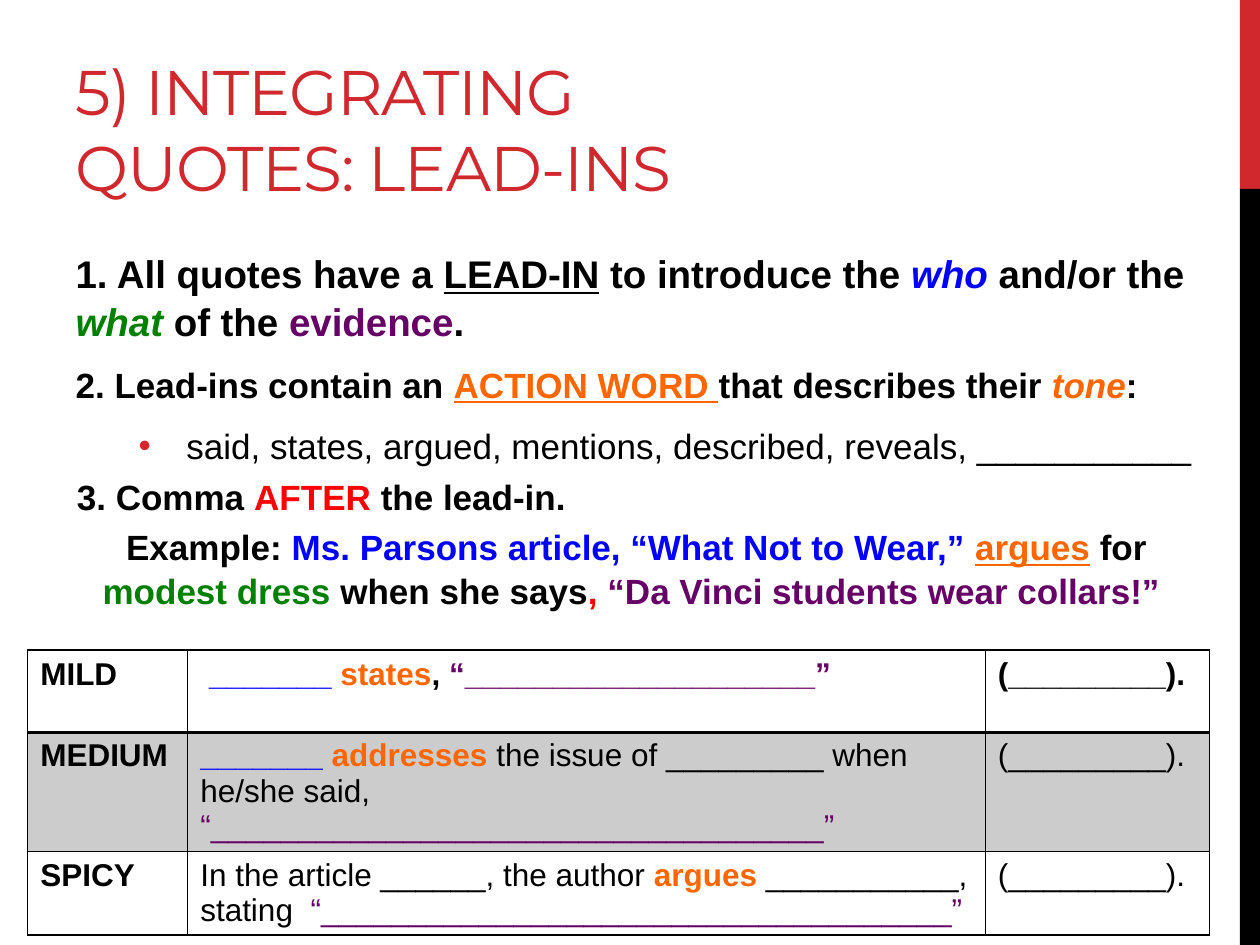
from lxml import etree
from pptx import Presentation
from pptx.dml.color import RGBColor
from pptx.enum.shapes import MSO_SHAPE
from pptx.enum.text import MSO_ANCHOR, MSO_AUTO_SIZE, PP_ALIGN
from pptx.oxml.ns import qn
from pptx.util import Inches, Pt

RECTANGLE = MSO_SHAPE.RECTANGLE
BOTTOM, TOP = MSO_ANCHOR.BOTTOM, MSO_ANCHOR.TOP
LEFT, CENTER = PP_ALIGN.LEFT, PP_ALIGN.CENTER
NO_AUTOFIT = MSO_AUTO_SIZE.NONE

COLORS = {
    "red": "D1282E", "black": "000000", "blue": "0000FF", "green": "008000",
    "purple": "660066", "orange": "FF6600", "bright red": "FF0000",
}


def add_text(para, text, size=20, font="Arial", color="black", bold=False,
             italic=False, underline=False, spacing=None):
    span = para.add_run()
    span.text = text
    style = span.font
    style.size, style.name = Pt(size), font
    style.bold, style.italic, style.underline = bold, italic, underline
    style.color.rgb = RGBColor.from_string(COLORS[color])
    if spacing is not None:
        span._r.get_or_add_rPr().set("spc", str(int(spacing * 100)))


def add_color(parent, color):
    return etree.SubElement(parent, qn("a:srgbClr"), val=COLORS[color])


class SlideBuilder:
    def __init__(self, deck):
        self.page = deck.slides.add_slide(deck.slide_layouts[1])

    def bar(self, left, top, width, height, color):
        box = self.page.shapes.add_shape(
            RECTANGLE, *map(Inches, (left, top, width, height)))
        box.shadow.inherit = False
        box.fill.solid()
        box.fill.fore_color.rgb = RGBColor.from_string(COLORS[color])
        box.line.fill.background()

    def placeholder(self, index, left, top, width, height, anchor):
        box = self.page.placeholders[index]
        box.left, box.top, box.width, box.height = map(
            Inches, (left, top, width, height))
        frame = box.text_frame
        frame.word_wrap = True
        frame.auto_size = NO_AUTOFIT
        frame.vertical_anchor = anchor
        return frame

    def title(self, text, *place):
        para = self.placeholder(0, *place, BOTTOM).paragraphs[0]
        para.alignment = LEFT
        add_text(para, text, size=36, font="Montserrat", color="red", spacing=-0.6)

    def body(self, items, *place):
        frame = self.placeholder(1, *place, TOP)
        for number, (layout, spans) in enumerate(items):
            para = frame.add_paragraph() if number else frame.paragraphs[0]
            self.list_item(para, spans, **layout)

    def list_item(self, para, spans, size=20, level=0, margin=0, indent=0,
                  after=0, bullet=None, align=LEFT):
        para.level, para.alignment = level, align
        para.line_spacing = 1.04
        para.space_before, para.space_after = Pt(size * 0.2), Pt(after)
        props = para._p.get_or_add_pPr()
        props.set("marL", str(Inches(margin)))
        props.set("indent", str(Inches(indent)))
        if bullet:
            add_color(etree.SubElement(props, qn("a:buClr")), "red")
            etree.SubElement(props, qn("a:buChar"), char=bullet)
        else:
            etree.SubElement(props, qn("a:buNone"))
        for text, style in spans:
            add_text(para, text, size=size, **style)

    def table(self, rows, left, top, widths, heights):
        grid = self.page.shapes.add_table(
            len(rows), len(widths), Inches(left), Inches(top),
            Inches(sum(widths)), Inches(sum(heights))).table
        for column, width in zip(grid.columns, widths):
            column.width = Inches(width)
        for r, (row, height) in enumerate(zip(rows, heights)):
            grid.rows[r].height = Inches(height)
            for c, spans in enumerate(row):
                cell = grid.cell(r, c)
                self.cell_format(cell, shaded=r == 1,
                                 top_width=2 if r == 1 else 1,
                                 bottom_width=2 if r == 0 else 1)
                for text, style in spans:
                    add_text(cell.text_frame.paragraphs[0], text, size=18, **style)

    def cell_format(self, cell, shaded, top_width, bottom_width):
        props = cell._tc.get_or_add_tcPr()
        sides = {"L": 1, "R": 1, "T": top_width, "B": bottom_width}
        for side, width in sides.items():
            line = etree.SubElement(props, qn(f"a:ln{side}"), w=str(Pt(width)))
            add_color(etree.SubElement(line, qn("a:solidFill")), "black")
        if shaded:
            tint = add_color(etree.SubElement(props, qn("a:solidFill")), "black")
            etree.SubElement(tint, qn("a:alpha"), val="20000")
        else:
            cell.fill.background()


# Run formats
PLAIN = {}
BOLD = {"bold": True}
BLUE, GREEN, PURPLE, ORANGE, RED = (
    {"bold": True, "color": name}
    for name in ("blue", "green", "purple", "orange", "bright red"))
PLAIN_PURPLE = {"color": "purple"}
ITALIC = {"italic": True}
UNDERLINE = {"underline": True}

BODY = [
    ({"size": 22, "after": 6}, [
        ("1. All quotes have a ", BOLD), ("LEAD-IN", BOLD | UNDERLINE),
        (" to introduce the ", BOLD), ("who ", BLUE | ITALIC),
        ("and/or the ", BOLD), ("what ", GREEN | ITALIC), ("of the ", BOLD),
        ("evidence", PURPLE), (".", BOLD)]),
    ({"after": 6}, [
        ("2. Lead-ins contain an ", BOLD), ("ACTION WORD ", ORANGE | UNDERLINE),
        ("that describes their ", BOLD), ("tone", ORANGE | ITALIC), (":", BOLD)]),
    ({"level": 1, "margin": 0.88, "indent": -0.38, "bullet": "•"}, [
        ("said, states, argued, mentions, described, reveals, ___________", PLAIN)]),
    ({"level": 1, "margin": 0.01}, [
        ("3. Comma ", BOLD), ("AFTER", RED), (" the lead-in.", BOLD)]),
    ({"after": 6, "align": CENTER}, [
        ("Example: ", BOLD), ("Ms. Parsons article, “What Not to Wear,” ", BLUE),
        ("argues", ORANGE | UNDERLINE), (" for ", BOLD),
        ("modest dress ", GREEN), ("when she says", BOLD), (", ", RED),
        ("“Da Vinci students wear collars!” ", PURPLE)]),
]

CITATION = "(_________)."
LEAD_INS = [
    [[("MILD", BOLD)],
     [(" ", BOLD), ("_______ ", BLUE), ("states", ORANGE), (", ", BOLD),
      ("“____________________”", PURPLE)],
     [(CITATION, BOLD)]],
    [[("MEDIUM", BOLD)],
     [("_______ ", BLUE), ("addresses", ORANGE),
      (" the issue of _________ when he/she said, ", PLAIN),
      ("“___________________________________”", PLAIN_PURPLE)],
     [(CITATION, PLAIN)]],
    [[("SPICY", BOLD)],
     [("In the article ______, the author ", PLAIN), ("argues", ORANGE),
      (" ___________, stating  ", PLAIN),
      ("“____________________________________”", PLAIN_PURPLE)],
     [(CITATION, PLAIN)]],
]


def main():
    deck = Presentation()
    deck.slide_width, deck.slide_height = Inches(10), Inches(7.5)
    builder = SlideBuilder(deck)

    # Side bars
    builder.bar(9.84, 0, 0.16, 1.5, "red")
    builder.bar(9.84, 1.5, 0.16, 6, "black")

    # Title and rules
    builder.title("5) INTEGRATING QUOTES: LEAD-INS", 0.5, 0.17, 6.33, 1.5)
    builder.body(BODY, 0.5, 1.92, 9.1, 5.28)

    # Sentence frames
    builder.table(LEAD_INS, 0.22, 5.16, widths=[1.27, 6.33, 1.78],
                  heights=[0.65, 0.95, 0.66])

    deck.save("out.pptx")


if __name__ == "__main__":
    main()
